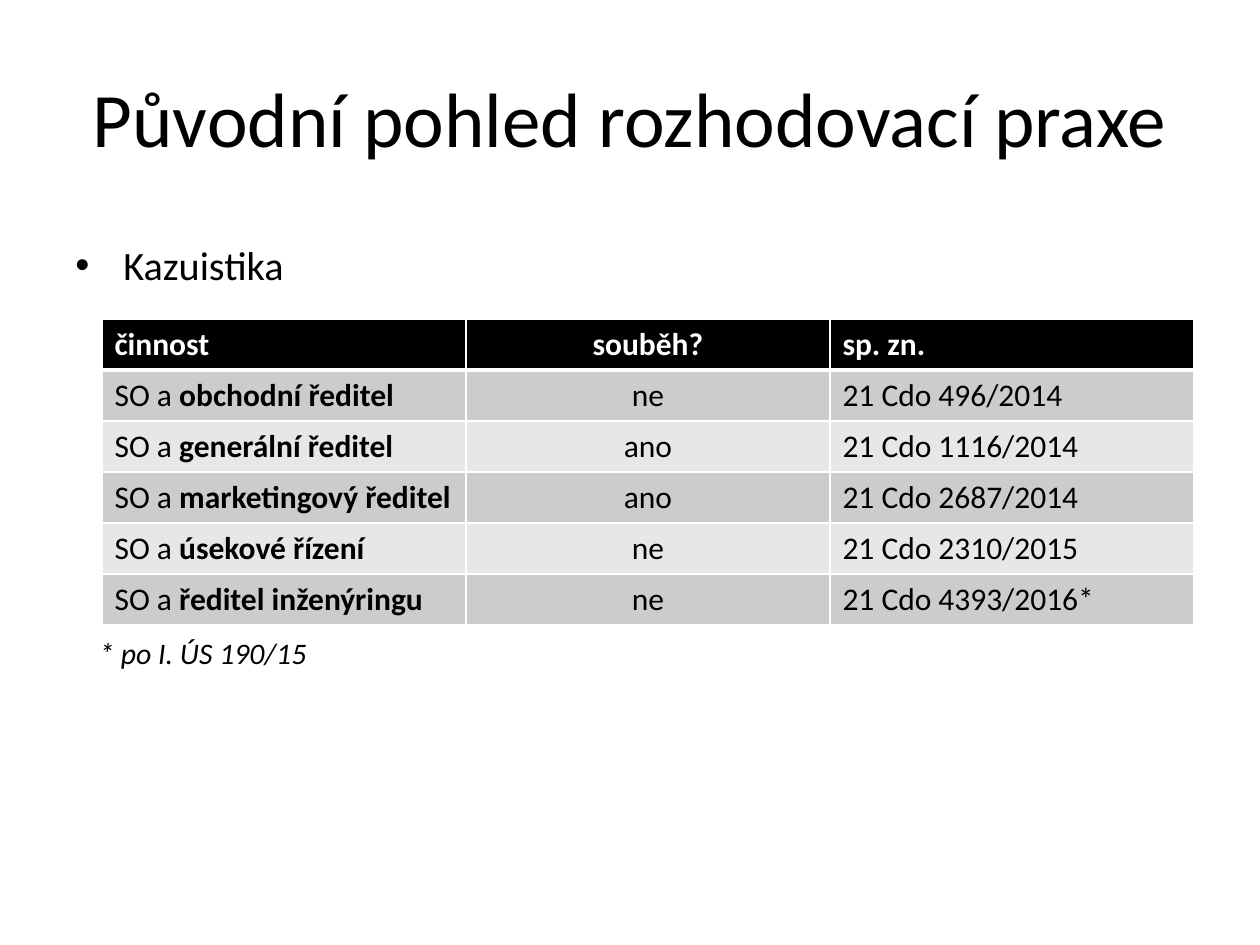
from dataclasses import dataclass

from lxml.etree import SubElement
from pptx import Presentation
from pptx.dml.color import RGBColor
from pptx.enum.text import MSO_ANCHOR as Anchor, PP_ALIGN as Align
from pptx.oxml.ns import qn
from pptx.util import Emu, Pt

PX_PER_INCH = 126
BLACK, WHITE = "000000", "FFFFFF"
BANDS = ("CCCCCC", "E7E7E7")


@dataclass(frozen=True)
class Span:
    text: str
    size: int = 18
    color: str = BLACK
    bold: bool = False
    italic: bool = False


@dataclass(frozen=True)
class TextBlock:
    span: Span
    left: int
    top: int
    width: int
    height: int
    align: Align = Align.LEFT
    anchor: Anchor = Anchor.TOP
    bullet_indent: int = 0


@dataclass(frozen=True)
class Ruling:
    role: str
    case: str
    concurrent: bool


BLOCKS = (
    TextBlock(Span("Původní pohled rozhodovací praxe", 44), 63, 38, 1134, 157,
              Align.CENTER, Anchor.MIDDLE),
    TextBlock(Span("Kazuistika", 23), 63, 234, 1172, 64, bullet_indent=48),
    TextBlock(Span("* po I. ÚS 190/15", 17, italic=True), 87, 629, 1148, 50),
)
HEADINGS = ("činnost", "souběh?", "sp. zn.")
RULINGS = (
    Ruling("obchodní ředitel", "21 Cdo 496/2014", False),
    Ruling("generální ředitel", "21 Cdo 1116/2014", True),
    Ruling("marketingový ředitel", "21 Cdo 2687/2014", True),
    Ruling("úsekové řízení", "21 Cdo 2310/2015", False),
    Ruling("ředitel inženýringu", "21 Cdo 4393/2016*", False),
)
TABLE_LEFT, TABLE_TOP, COLUMN_WIDTH, ROW_HEIGHT = 102, 319, 364, 51


def px(length: int) -> Emu:
    return Emu(round(length * 914400 / PX_PER_INCH))


def rgb(color: str) -> RGBColor:
    return RGBColor.from_string(color)


def write(para, spans: list[Span], align: Align) -> None:
    para.alignment = align
    for span in spans:
        run = para.add_run()
        run.text = span.text
        formats = {"name": "Calibri", "size": Pt(span.size),
                   "bold": span.bold, "italic": span.italic}
        for name, value in formats.items():
            setattr(run.font, name, value)
        run.font.color.rgb = rgb(span.color)


def add_bullet(para, indent: int) -> None:
    props = para._p.get_or_add_pPr()
    props.set("marL", str(px(indent)))
    props.set("indent", str(-px(indent)))
    SubElement(props, qn("a:buFont"), typeface="Arial")
    SubElement(props, qn("a:buChar"), char="•")


def add_text(page, block: TextBlock) -> None:
    box = page.shapes.add_textbox(px(block.left), px(block.top),
                                  px(block.width), px(block.height))
    frame = box.text_frame
    frame.word_wrap = True
    frame.vertical_anchor = block.anchor
    para = frame.paragraphs[0]
    write(para, [block.span], block.align)
    if block.bullet_indent:
        add_bullet(para, block.bullet_indent)


def add_borders(cell, bottom: int, top: int) -> None:
    """Draw white cell borders; must run before the cell gets its fill."""
    props = cell._tc.get_or_add_tcPr()
    for side, points in {"L": 1, "R": 1, "T": top, "B": bottom}.items():
        line = SubElement(props, qn(f"a:ln{side}"), w=str(Pt(points)))
        fill = SubElement(line, qn("a:solidFill"))
        SubElement(fill, qn("a:srgbClr"), val=WHITE)


def table_rows() -> list[list[list[Span]]]:
    """Give the spans of each cell, row by row."""
    rows = [[[Span(heading, color=WHITE, bold=True)] for heading in HEADINGS]]
    for ruling in RULINGS:
        rows.append([
            [Span("SO a "), Span(ruling.role, bold=True)],
            [Span("ano" if ruling.concurrent else "ne")],
            [Span(ruling.case)],
        ])
    return rows


def add_rulings_table(page) -> None:
    rows = table_rows()
    table = page.shapes.add_table(
        len(rows), len(HEADINGS), px(TABLE_LEFT), px(TABLE_TOP),
        px(COLUMN_WIDTH * len(HEADINGS)), px(ROW_HEIGHT * len(rows))).table
    for column in table.columns:
        column.width = px(COLUMN_WIDTH)
    for row_index, cells in enumerate(rows):
        table.rows[row_index].height = px(ROW_HEIGHT)
        fill = BANDS[(row_index - 1) % 2] if row_index else BLACK
        for column_index, spans in enumerate(cells):
            cell = table.cell(row_index, column_index)
            add_borders(cell, bottom=1 if row_index else 3,
                        top=3 if row_index == 1 else 1)
            cell.fill.solid()
            cell.fill.fore_color.rgb = rgb(fill)
            align = Align.CENTER if column_index == 1 else Align.LEFT
            write(cell.text_frame.paragraphs[0], spans, align)


def main() -> None:
    deck = Presentation()
    deck.slide_width, deck.slide_height = px(1260), px(945)
    page = deck.slides.add_slide(deck.slide_layouts[6])
    for block in BLOCKS:
        add_text(page, block)
    add_rulings_table(page)
    deck.save("out.pptx")


if __name__ == "__main__":
    main()
